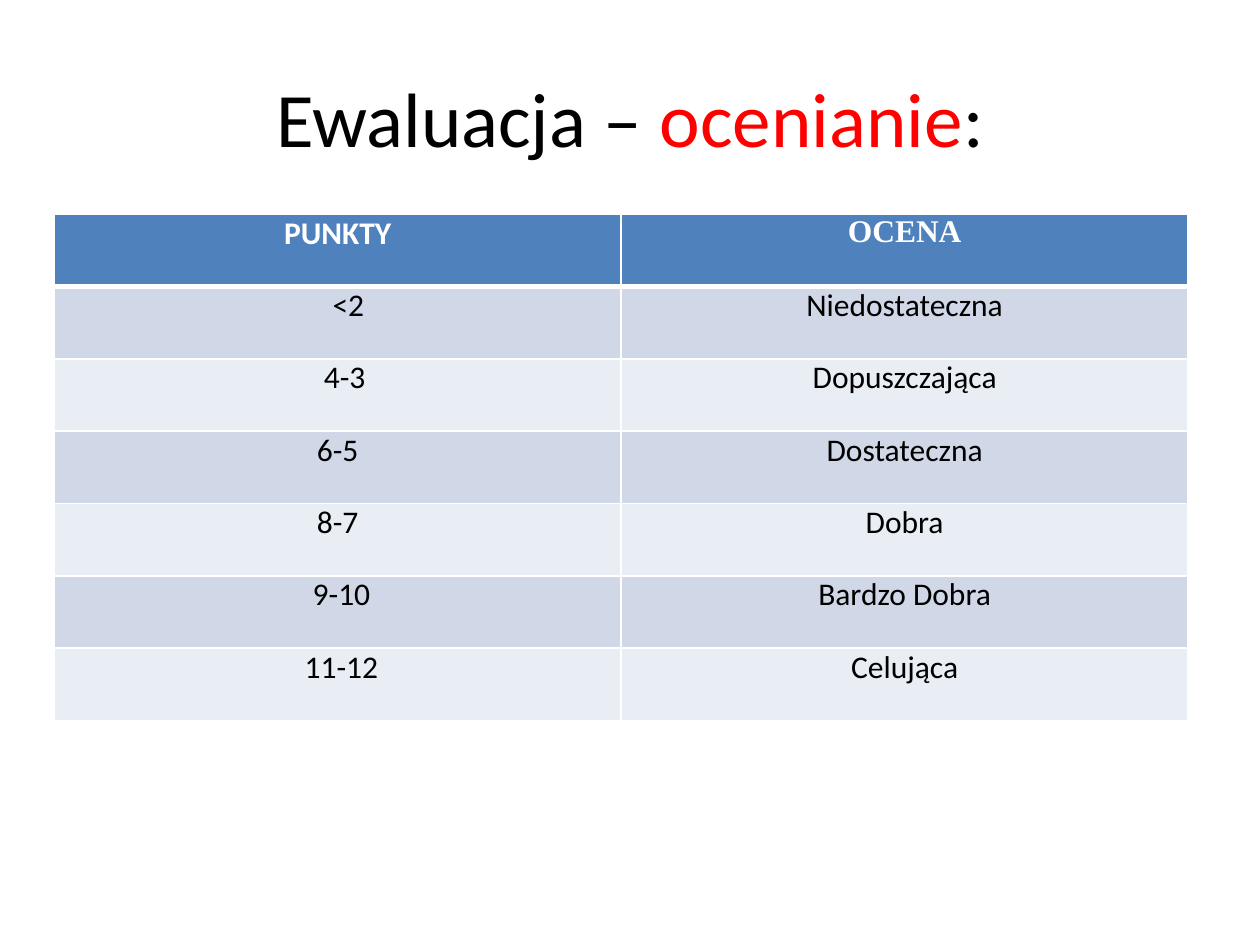
import dataclasses

import pptx
import pptx.dml.color
import pptx.enum.text
import pptx.oxml.ns
import pptx.util
from lxml import etree

Inches = pptx.util.Inches
Pt = pptx.util.Pt


@dataclasses.dataclass(frozen=True)
class Theme:
    font: str = "Calibri"
    accent_font: str = "Times New Roman"
    title_size: int = 44
    table_size: int = 18
    text: str = "000000"
    accent: str = "FF0000"
    header_text: str = "FFFFFF"
    header_fill: str = "4F81BD"
    bands: tuple = ("D0D8E8", "E9EDF4")
    border: str = "FFFFFF"
    thin: int = 1
    thick: int = 3


THEME = Theme()
HEADERS = (("PUNKTY", THEME.font), ("OCENA", THEME.accent_font))
# Points, grade, extra left indent of the points in inches
GRADES = (
    ("<2", "Niedostateczna", 0.17),
    ("4-3", "Dopuszczająca", 0.11),
    ("6-5", "Dostateczna", 0),
    ("8-7", "Dobra", 0),
    ("9-10", "Bardzo Dobra", 0.06),
    ("11-12", "Celująca", 0.06),
)


def rgb(value):
    return pptx.dml.color.RGBColor.from_string(value)


def add_span(para, text, size, color, font=THEME.font, bold=False):
    para.alignment = pptx.enum.text.PP_ALIGN.CENTER
    span = para.add_run()
    span.text = text
    span.font.name = font
    span.font.size = Pt(size)
    span.font.bold = bold
    span.font.color.rgb = rgb(color)


def add_title(page):
    box = page.shapes.add_textbox(Inches(0.5), Inches(0.3), Inches(9), Inches(1.25))
    frame = box.text_frame
    frame.word_wrap = True
    frame.vertical_anchor = pptx.enum.text.MSO_ANCHOR.MIDDLE
    for text, color in (
        ("Ewaluacja – ", THEME.text),
        ("ocenianie", THEME.accent),
        (":", THEME.text),
    ):
        add_span(frame.paragraphs[0], text, THEME.title_size, color)


def set_borders(cell, top, bottom):
    """Draw all four cell edges; the line elements must precede the fill."""
    properties = cell._tc.get_or_add_tcPr()
    widths = {"lnL": THEME.thin, "lnR": THEME.thin, "lnT": top, "lnB": bottom}
    for index, (edge, width) in enumerate(widths.items()):
        line = etree.Element(pptx.oxml.ns.qn(f"a:{edge}"), w=str(Pt(width)))
        fill = etree.SubElement(line, pptx.oxml.ns.qn("a:solidFill"))
        etree.SubElement(fill, pptx.oxml.ns.qn("a:srgbClr"), val=THEME.border)
        properties.insert(index, line)


def style_cell(cell, fill, top=THEME.thin, bottom=THEME.thin, indent=0):
    cell.margin_left = Inches(0.07 + indent)
    cell.margin_right = Inches(0.07)
    cell.margin_top = cell.margin_bottom = 0
    cell.fill.solid()
    cell.fill.fore_color.rgb = rgb(fill)
    set_borders(cell, top, bottom)


def add_grades(page):
    table = page.shapes.add_table(
        len(GRADES) + 1, len(HEADERS), Inches(0.43), Inches(1.7), Inches(9), Inches(4.02)
    ).table
    table.first_row = table.horz_banding = False

    for column, (text, font) in enumerate(HEADERS):
        cell = table.cell(0, column)
        style_cell(cell, THEME.header_fill, bottom=THEME.thick)
        add_span(cell.text_frame.paragraphs[0], text, THEME.table_size,
                 THEME.header_text, font, bold=True)

    for row, (points, grade, indent) in enumerate(GRADES, start=1):
        fill = THEME.bands[(row - 1) % len(THEME.bands)]
        top = THEME.thick if row == 1 else THEME.thin
        for column, (text, shift) in enumerate(((points, indent), (grade, 0))):
            cell = table.cell(row, column)
            style_cell(cell, fill, top=top, indent=shift)
            add_span(cell.text_frame.paragraphs[0], text, THEME.table_size, THEME.text)


def main():
    deck = pptx.Presentation()
    deck.slide_width = Inches(10)
    deck.slide_height = Inches(7.5)
    page = deck.slides.add_slide(deck.slide_layouts[6])
    add_title(page)
    add_grades(page)
    deck.save("out.pptx")


if __name__ == "__main__":
    main()
